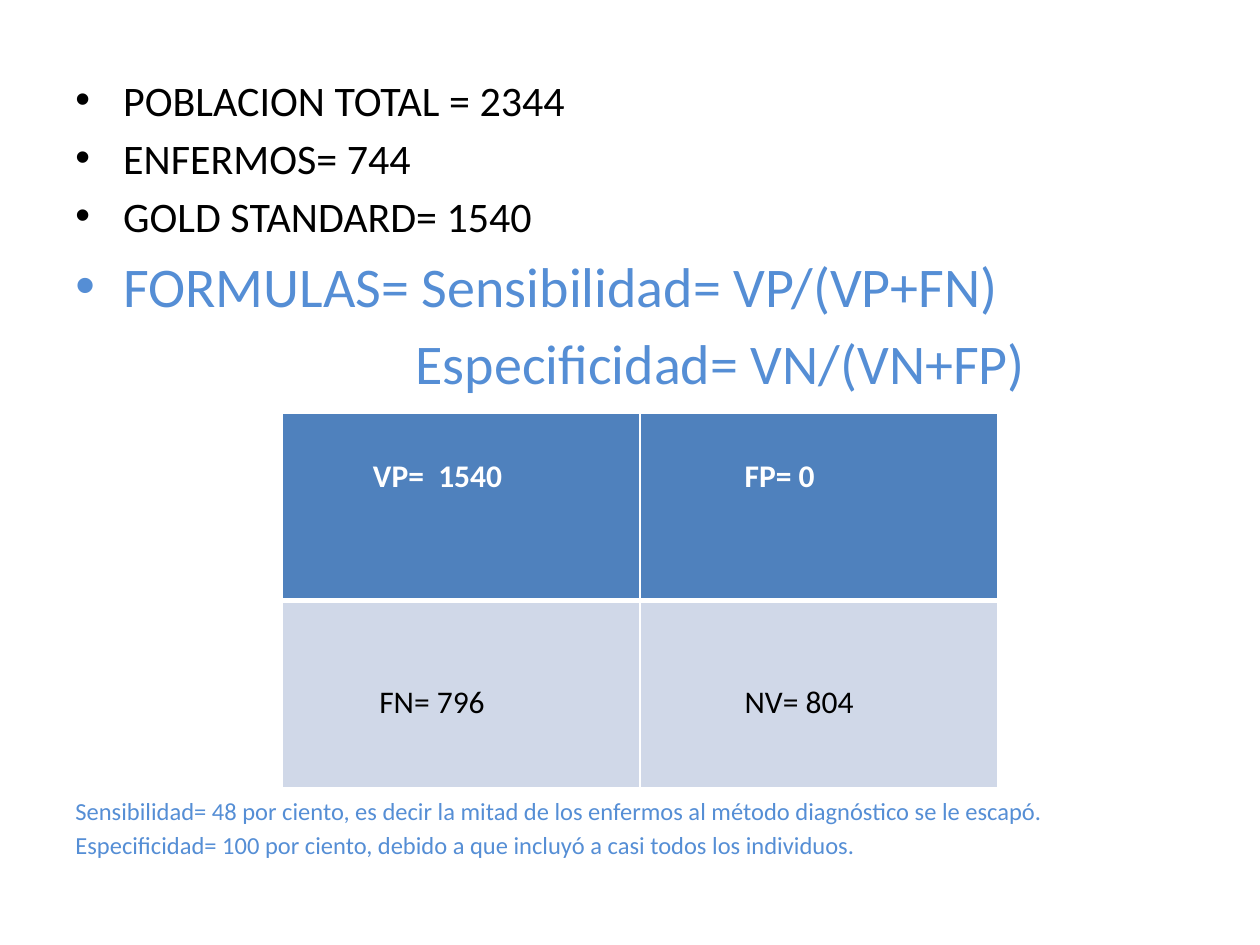
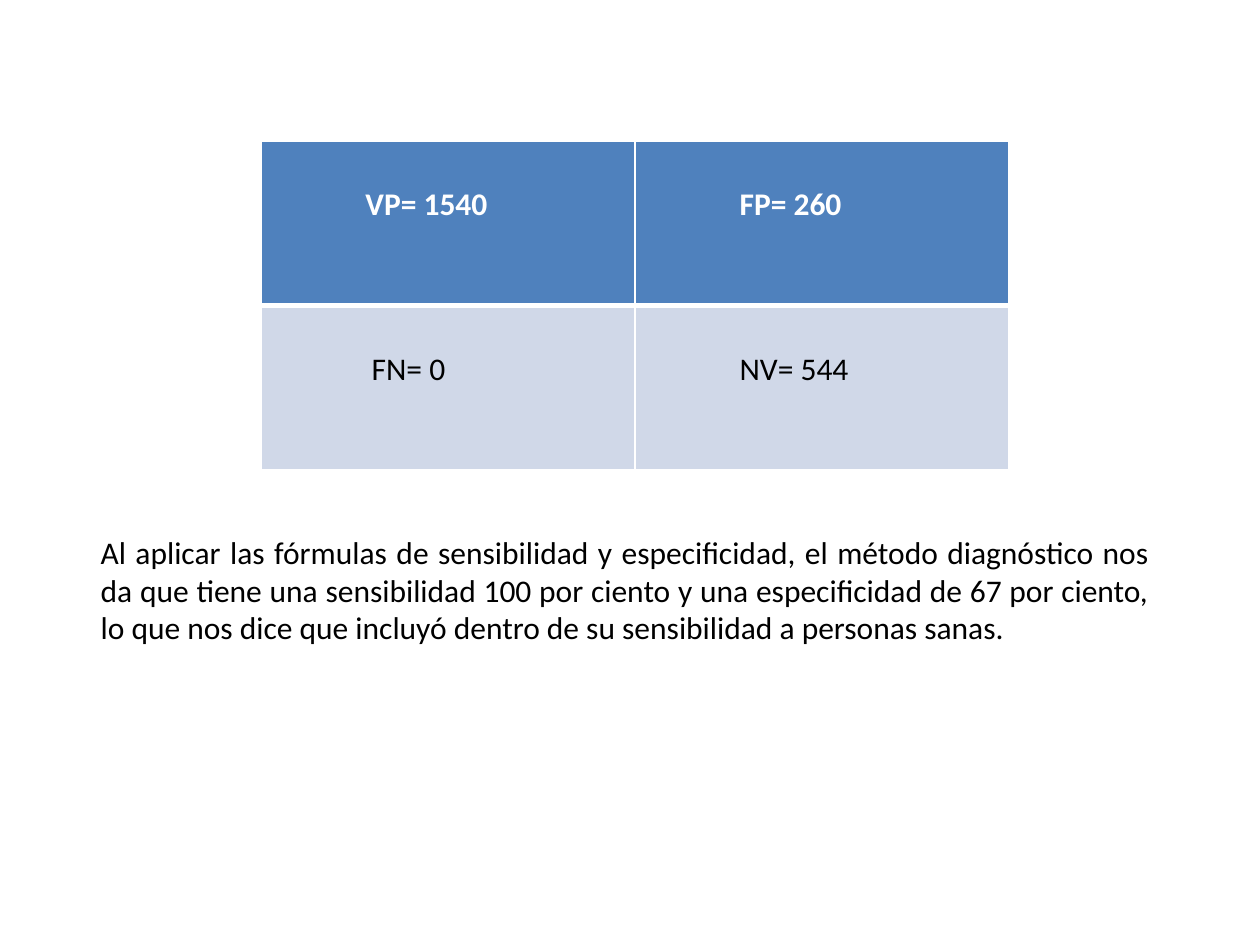
from pptx import Presentation
from pptx.dml.color import RGBColor
from pptx.enum.text import PP_ALIGN
from pptx.oxml import parse_xml
from pptx.oxml.ns import nsdecls
from pptx.util import Inches, Pt

FONT = "Calibri"
BLACK = RGBColor(0, 0, 0)
WHITE = RGBColor(255, 255, 255)
BLUE = RGBColor(0x4F, 0x81, 0xBD)
PALE = RGBColor(0xD0, 0xD8, 0xE8)
SKY = RGBColor(0x55, 0x8E, 0xD5)
COLS, ROWS = 10, 7.5    # slide grid, one unit is one inch
LINE = 0.305            # height of one 18 pt line
PAD = 0.05              # top inset of a cell


def style(para, size, color, bold=False, align=None):
    font = para.font
    font.name, font.size, font.bold = FONT, Pt(size), bold
    font.color.rgb = color
    para.alignment = align


def indent(para, left, bullet=False):
    props = para._p.get_or_add_pPr()
    props.set("marL", str(Inches(left)))
    props.set("indent", str(-Inches(left) if bullet else 0))
    if bullet:
        props.append(parse_xml(f'<a:buFont {nsdecls("a")} typeface="Arial"/>'))
        props.append(parse_xml(f'<a:buChar {nsdecls("a")} char="•"/>'))


def add_text(slide, box, items):
    """Write items of (text, size, color, align, gap, left, bullet)."""
    frame = slide.shapes.add_textbox(*map(Inches, box)).text_frame
    frame.word_wrap = True
    for i, (text, size, color, align, gap, left, bullet) in enumerate(items):
        para = frame.add_paragraph() if i else frame.paragraphs[0]
        para.text = text
        style(para, size, color, align=align)
        if i:
            para.space_before = Pt(gap)
        indent(para, left, bullet)


def edge(cell, widths):
    """Draw white cell borders: left, right, top, bottom, in points."""
    props = cell._tc.get_or_add_tcPr()
    for i, (side, width) in enumerate(zip("LRTB", widths)):
        props.insert(i, parse_xml(
            f'<a:ln{side} {nsdecls("a")} w="{Pt(width)}"><a:solidFill>'
            f'<a:srgbClr val="{WHITE}"/></a:solidFill></a:ln{side}>'))


def add_grid(slide, box, rows):
    """Write rows of (lines above the text, [(text, left indent)])."""
    table = slide.shapes.add_table(2, 2, *map(Inches, box)).table
    for r, (skip, cells) in enumerate(rows):
        head = r == 0
        for c, (text, left) in enumerate(cells):
            cell = table.cell(r, c)
            cell.text = text
            cell.margin_top = Inches(PAD + skip * LINE)
            cell.fill.solid()
            cell.fill.fore_color.rgb = BLUE if head else PALE
            para = cell.text_frame.paragraphs[0]
            style(para, 18, WHITE if head else BLACK, bold=head)
            indent(para, left)
            edge(cell, (1, 1, 1, 3) if head else (1, 1, 3, 1))


def first_test(slide):
    # Data and formulas
    facts = ["POBLACION TOTAL = 2344", "ENFERMOS= 744", "GOLD STANDARD= 1540"]
    items = [(fact, 24, BLACK, None, 4.3, 0.38, True) for fact in facts]
    items += [
        ("FORMULAS= Sensibilidad= VP/(VP+FN)", 32, SKY, None, 6, 0.38, True),
        ("Especificidad= VN/(VN+FP)", 32, SKY, None, 6, 2.7, False)]
    add_text(slide, (0.5, 0.54, COLS - 1, 2.7), items)
    # Two by two table
    add_grid(slide, (2.24, 3.28, 5.68, 2.97), [
        (1, [("VP=  1540", 0.62), ("FP= 0", 0.73)]),
        (2, [("FN= 796", 0.67), ("NV= 804", 0.73)])])
    # Findings
    notes = ["Sensibilidad= 48 por ciento, es decir la mitad de los enfermos "
             "al método diagnóstico se le escapó.",
             "Especificidad= 100 por ciento, debido a que incluyó a casi "
             "todos los individuos."]
    add_text(slide, (0.5, 6.27, COLS - 1, 0.65), [
        (note, 14, SKY, PP_ALIGN.JUSTIFY, 2.4, 0, False) for note in notes])


def second_test(slide):
    # Two by two table
    add_grid(slide, (2.07, 1.12, 5.94, 2.61), [
        (1, [("VP= 1540", 0.73), ("FP= 260", 0.73)]),
        (1, [("FN= 0", 0.78), ("NV= 544", 0.73)])])
    # Conclusion
    note = ("Al aplicar las fórmulas de sensibilidad y especificidad, el "
            "método diagnóstico nos da que tiene una sensibilidad 100 por "
            "ciento y una especificidad de 67 por ciento, lo que nos dice que "
            "incluyó dentro de su sensibilidad a personas sanas.")
    add_text(slide, (0.7, 4.18, 8.52, 1.01), [
        (note, 18, BLACK, PP_ALIGN.JUSTIFY, 0, 0, False)])


def main():
    deck = Presentation()
    deck.slide_width, deck.slide_height = Inches(COLS), Inches(ROWS)
    for build in (first_test, second_test):
        build(deck.slides.add_slide(deck.slide_layouts[6]))
    deck.save("out.pptx")


if __name__ == "__main__":
    main()
